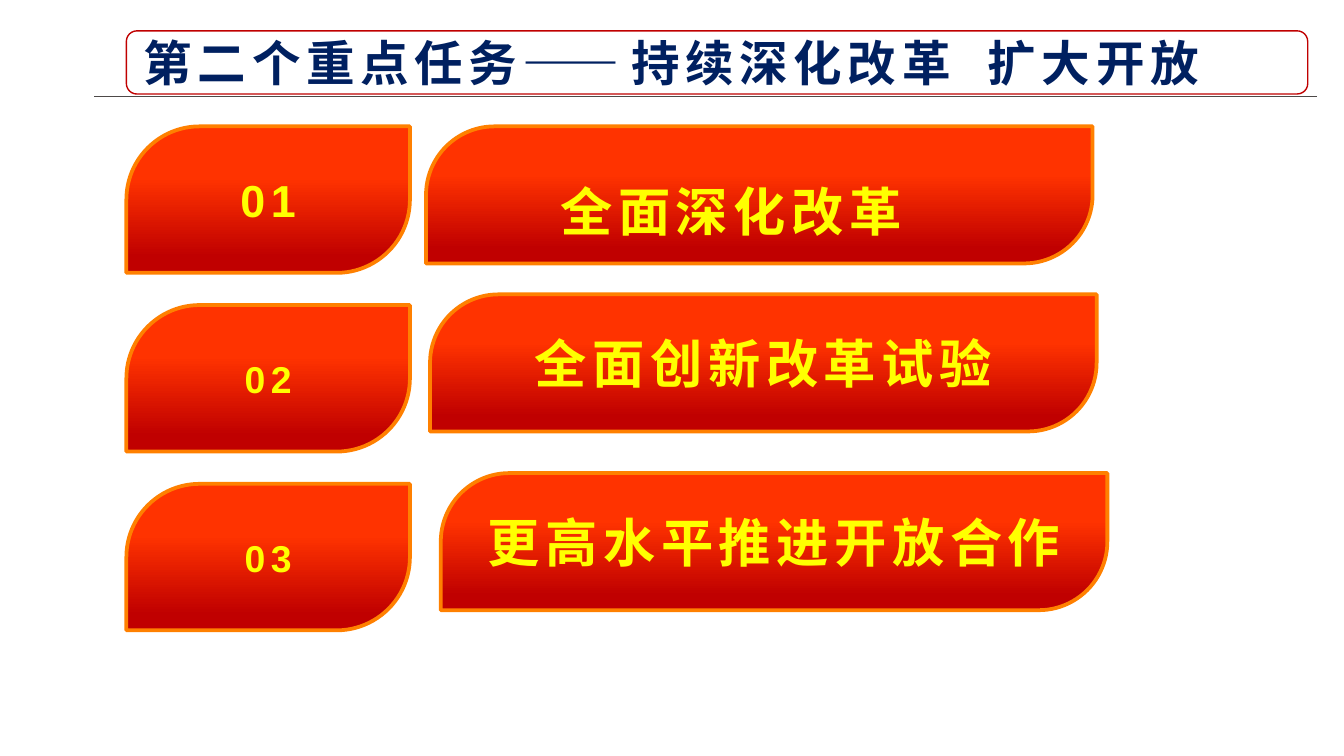
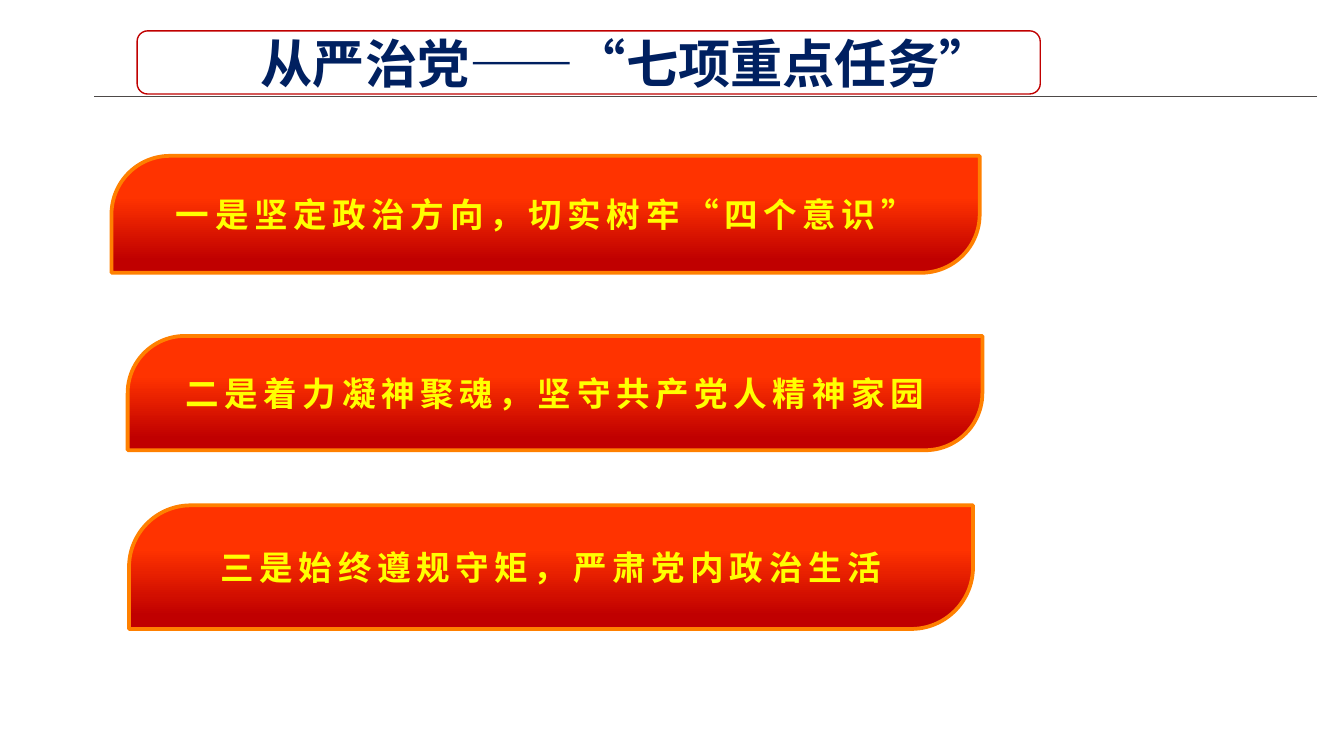
import pptx
import pptx.util
import pptx.dml.color
import pptx.enum.dml
import pptx.enum.lang
import pptx.enum.shapes
import pptx.enum.text
import pptx.oxml
import pptx.oxml.ns

Inches = pptx.util.Inches
Pt = pptx.util.Pt
RGB = pptx.dml.color.RGBColor
SHAPE = pptx.enum.shapes.MSO_SHAPE
ALIGN = pptx.enum.text.PP_ALIGN
MIDDLE = pptx.enum.text.MSO_ANCHOR.MIDDLE
qn = pptx.oxml.ns.qn

NAVY = RGB(0x00, 0x20, 0x60)
GREY = RGB(0x4D, 0x49, 0x48)
CRIMSON = RGB(0xC0, 0x00, 0x00)
SCARLET = RGB(0xFF, 0x33, 0x00)
ORANGE = RGB(0xFF, 0x80, 0x00)
YELLOW = RGB(0xFF, 0xFF, 0x00)
HAN = "Noto Sans CJK SC"


def write(frame, text, size, color, face, align, gap=3):
    """Set one bold paragraph, vertically centred, with letter spacing in points."""
    frame.word_wrap = True
    frame.auto_size = pptx.enum.text.MSO_AUTO_SIZE.NONE
    frame.vertical_anchor = MIDDLE
    frame.text = text
    par = frame.paragraphs[0]
    par.alignment = align
    for run in par.runs:
        font = run.font
        font.size = Pt(size)
        font.bold = True
        font.color.rgb = color
        font.name = face
        font.language_id = pptx.enum.lang.MSO_LANGUAGE_ID.SIMPLIFIED_CHINESE
        props = run._r.get_or_add_rPr()
        props.set("spc", str(gap * 100))
        latin = props.find(qn("a:latin"))
        east = pptx.oxml.parse_xml(
            f'<a:ea {pptx.oxml.ns.nsdecls("a")} typeface="{HAN}"/>')
        latin.addnext(east)


def leaf(slide, box, text="", size=18):
    """Add a red banner with two opposite corners rounded."""
    shape = slide.shapes.add_shape(
        SHAPE.ROUND_2_DIAG_RECTANGLE, *[Inches(v) for v in box])
    shape.shadow.inherit = False
    shape.adjustments[0] = 0.5
    shape.adjustments[1] = 0
    shape.fill.gradient()
    shape.fill.gradient_angle = 270
    stops = zip(shape.fill.gradient_stops, (0.35, 0.89), (SCARLET, CRIMSON))
    for stop, place, color in stops:
        stop.position = place
        stop.color.rgb = color
    shape.line.color.rgb = ORANGE
    shape.line.width = Pt(2)
    if text:
        write(shape.text_frame, text, size, YELLOW, "Arial", ALIGN.CENTER)


prs = pptx.Presentation()
prs.slide_width = Inches(10)
prs.slide_height = prs.slide_width * 9 // 16
layout = prs.slide_layouts[5]

# Titles: text, frame left, frame width, text indent, size, letter spacing
heads = [
    ("第二个重点任务——持续深化改革\t扩大开放", 0.94, 8.79, 0.13, 26, 3),
    ("从严治党——“七项重点任务”", 1.02, 6.72, 0.92, 28, 0),
]
for text, left, width, indent, size, gap in heads:
    slide = prs.slides.add_slide(layout)
    frame = slide.shapes.add_shape(
        SHAPE.ROUNDED_RECTANGLE,
        Inches(left), Inches(0.23), Inches(width), Inches(0.47))
    frame.shadow.inherit = False
    frame.fill.background()
    frame.line.color.rgb = CRIMSON
    frame.line.width = Pt(0.75)

    title = slide.shapes.title
    title.left, title.top = Inches(left), Inches(0.1)
    title.width, title.height = Inches(width), Inches(0.73)
    body = title.text_frame
    body.margin_left = Inches(indent)
    body.margin_top = body.margin_bottom = 0
    write(body, text, size, NAVY, HAN, ALIGN.LEFT, gap)
    slide.shapes.element.append(title.element)
    if "\t" in text:
        props = body.paragraphs[0]._p.get_or_add_pPr()
        props.append(pptx.oxml.parse_xml(
            f'<a:tabLst {pptx.oxml.ns.nsdecls("a")}>'
            f'<a:tab pos="{Inches(6.28)}" algn="l"/></a:tabLst>'))

tasks, party = prs.slides

# The rule under the title belongs to the shared layout
rule = tasks.shapes.add_connector(
    pptx.enum.shapes.MSO_CONNECTOR.STRAIGHT,
    Inches(9.8), Inches(0.72), Inches(0.7), Inches(0.72))
rule.line.color.rgb = GREY
rule.line.width = Pt(0.75)
rule.element.spPr.append(pptx.oxml.parse_xml(
    f'<a:effectLst {pptx.oxml.ns.nsdecls("a")}/>'))
layout.shapes.element.append(rule.element)

# Slide 1: numbers and tasks
for row, size in enumerate((24, 20, 20)):
    leaf(tasks, (0.94, 0.94 + row * 1.33, 2.11, 1.09), f"0{row + 1}", size)

for left, top, text in [
    (3.17, 0.94, ""),
    (3.2, 2.19, "全面创新改革试验"),
    (3.28, 3.52, "更高水平推进开放合作"),
]:
    leaf(tasks, (left, top, 4.96, 1.02), text, 28)

label = tasks.shapes.add_textbox(
    Inches(3.12), Inches(0.95), Inches(5), Inches(1.14))
label.text_frame.margin_left = Inches(1.05)
label.text_frame.margin_top = Inches(0.15)
write(label.text_frame, "全面深化改革", 28, YELLOW, HAN, ALIGN.LEFT)

# Slide 2: three duties
for box, text in [
    ((0.83, 1.16, 6.46, 0.87), "一是坚定政治方向，切实树牢“四个意识”"),
    ((0.95, 2.5, 6.36, 0.85), "二是着力凝神聚魂，坚守共产党人精神家园"),
    ((0.96, 3.76, 6.28, 0.92), "三是始终遵规守矩，严肃党内政治生活"),
]:
    leaf(party, box, text)

prs.save("out.pptx")
